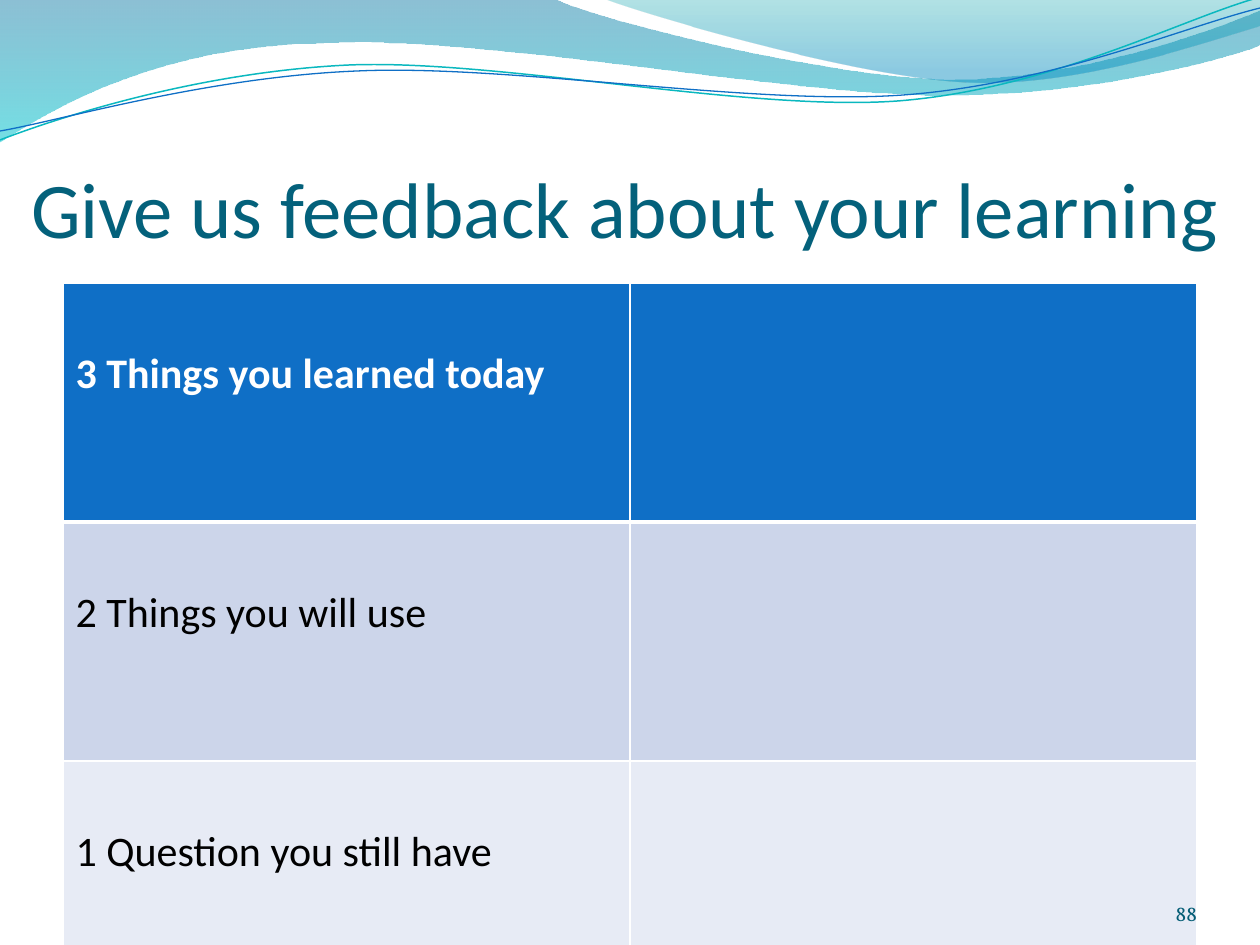
import math
from dataclasses import dataclass

from lxml import etree
from pptx import Presentation
from pptx import util as u
from pptx.dml.color import RGBColor
from pptx.enum import text
from pptx.oxml import ns

EMU_PER_PX = 914400 / 126


def px(length):
    return u.Emu(round(length * EMU_PER_PX))


@dataclass(frozen=True)
class Theme:
    font: str = "Calibri"
    number_font: str = "Vollkorn"
    title: str = "04617B"
    number: str = "045D75"
    header: str = "0F6FC6"
    aqua: str = "0AB8BF"
    bands: tuple = ("CCD5EA", "E7EBF5")
    white: str = "FFFFFF"
    black: str = "000000"
    title_size: int = 45
    table_size: int = 24
    number_size: int = 12
    # Gradient stops: position, colour, opacity in percent
    main_wave: tuple = ((0, "0074A1", 45), (100, "00C6CF", 55))
    top_wave: tuple = ((0, "00A1A9", 30), (80, "008BBF", 45))


class SlideBuilder:
    def __init__(self, slide, theme):
        self.slide = slide
        self.theme = theme

    def style(self, paragraph, size, color, font=None, bold=False):
        for run in paragraph.runs:
            run.font.name = font or self.theme.font
            run.font.size = u.Pt(size)
            run.font.bold = bold
            run.font.color.rgb = RGBColor.from_string(color)

    def outline(self, box, start, segments, close, rotation=0):
        """Draw lines (2 numbers) and cubic curves (6 numbers) inside a box."""
        left, top, width, height = box
        center_x, center_y = left + width / 2, top + height / 2
        cosine, sine = math.cos(math.radians(rotation)), math.sin(math.radians(rotation))

        def local(x, y):
            x, y = x - center_x, y - center_y
            return (px(x * cosine + y * sine + width / 2),
                    px(y * cosine - x * sine + height / 2))

        builder = self.slide.shapes.build_freeform(*local(*start), scale=1.0)
        builder.add_line_segments([local(*segment[-2:]) for segment in segments], close=close)
        shape = builder.convert_to_shape()
        shape.left, shape.top, shape.width, shape.height = map(px, box)
        shape.rotation = rotation
        shape.shadow.inherit = False

        # Place the path in the box and bend its curved segments
        outline = next(shape._element.iter(ns.qn("a:path")))
        outline.set("w", str(px(width)))
        outline.set("h", str(px(height)))
        for command, segment in zip(list(outline), [start, *segments]):
            for point in list(command):
                command.remove(point)
            if len(segment) == 6:
                command.tag = ns.qn("a:cubicBezTo")
            for x, y in zip(segment[::2], segment[1::2]):
                x, y = local(x, y)
                etree.SubElement(command, ns.qn("a:pt"), x=str(x), y=str(y))
        return shape

    def wave(self, stops, box, start, *segments):
        shape = self.outline(box, start, segments, close=True)
        shape.line.fill.background()
        shape.fill.gradient()
        shape.fill.gradient_angle = 270
        for stop, (position, color, _) in zip(shape.fill.gradient_stops, stops):
            stop.position = position / 100
            stop.color.rgb = RGBColor.from_string(color)
        colors = shape._element.spPr.iter(ns.qn("a:srgbClr"))
        for element, (_, _, opacity) in zip(colors, stops):
            etree.SubElement(element, ns.qn("a:alpha"), val=str(opacity * 1000))

    def curve(self, color, width, box, start, *segments):
        shape = self.outline(box, start, segments, close=False, rotation=357.3)
        shape.fill.background()
        shape.line.color.rgb = RGBColor.from_string(color)
        shape.line.width = u.Pt(width)

    def place_text(self, shape, content, box, margin_top=0):
        shape.left, shape.top, shape.width, shape.height = map(px, box)
        frame = shape.text_frame
        frame.word_wrap = True
        frame.auto_size = text.MSO_AUTO_SIZE.NONE
        frame.vertical_anchor = text.MSO_ANCHOR.BOTTOM
        frame.margin_left = frame.margin_right = frame.margin_bottom = 0
        frame.margin_top = px(margin_top)
        frame.text = content
        return frame.paragraphs[0]

    def title(self, content, box):
        paragraph = self.place_text(self.slide.shapes.title, content, box, margin_top=6)
        paragraph.alignment = text.PP_ALIGN.LEFT
        self.style(paragraph, self.theme.title_size, self.theme.title)

    def number(self, content, box):
        shape = self.slide.shapes.add_textbox(0, 0, 0, 0)
        paragraph = self.place_text(shape, content, box)
        paragraph.alignment = text.PP_ALIGN.RIGHT
        self.style(paragraph, self.theme.number_size, self.theme.number, self.theme.number_font)

    def borders(self, cell, widths):
        properties = cell._tc.get_or_add_tcPr()
        for side, width in zip("LRTB", widths):
            line = etree.SubElement(properties, ns.qn(f"a:ln{side}"), w=str(u.Pt(width)))
            fill = etree.SubElement(line, ns.qn("a:solidFill"))
            etree.SubElement(fill, ns.qn("a:srgbClr"), val=self.theme.white)

    def table(self, prompts, left, top, width, heights):
        frame = self.slide.shapes.add_table(len(prompts), 2, px(left), px(top),
                                            px(width), px(sum(heights)))
        for index, (row, prompt) in enumerate(zip(frame.table.rows, prompts)):
            header = index == 0
            row.height = px(heights[index])
            row.cells[0].text = prompt
            for cell in row.cells:
                # Prompts sit one line below the top of their row
                cell.margin_top = px(66)
                self.borders(cell, (1, 1, 3 if index == 1 else 1, 3 if header else 1))
                cell.fill.solid()
                fill = self.theme.header if header else self.theme.bands[(index - 1) % 2]
                cell.fill.fore_color.rgb = RGBColor.from_string(fill)
                color = self.theme.white if header else self.theme.black
                self.style(cell.text_frame.paragraphs[0], self.theme.table_size, color, bold=header)


def main():
    presentation = Presentation()
    presentation.slide_width, presentation.slide_height = px(1260), px(945)
    theme = Theme()
    slide = presentation.slides.add_slide(presentation.slide_layouts[5])
    builder = SlideBuilder(slide, theme)

    # Waves along the top edge
    builder.wave(theme.main_wave, (-1, -1, 1262, 143),
                 (0, 0), (554, -1), (600, 21, 837, 79, 955, 79),
                 (1075, 79, 1207, 33, 1260, 11), (1261, 45),
                 (1239, 55, 1096, 96, 940, 95), (784, 95, 481, 35, 324, 43),
                 (163, 45, 58, 105, -1, 142), (0, 0))
    builder.wave(theme.top_wave, (604, -1, 656, 88),
                 (604, -1), (641, 14, 859, 78, 969, 82),
                 (1079, 87, 1211, 40, 1260, 26), (1260, 0), (604, -1))
    builder.curve(theme.aqua, 0.85, (-2, 28, 1262, 89),
                  (0, 140), (60, 117, 199, 72, 349, 65),
                  (498, 59, 747, 112, 898, 101), (1050, 89, 1182, 19, 1257, -2))
    builder.curve(theme.header, 0.75, (-2, 38, 1263, 73),
                  (0, 131), (59, 121, 207, 77, 357, 71),
                  (508, 64, 752, 106, 903, 95), (1053, 84, 1186, 26, 1260, 8))

    # Title, feedback table and slide number
    builder.title("Give us feedback about your learning", (31, 97, 1197, 157))
    builder.table(("3 Things you learned today", "2 Things you will use",
                   "1 Question you still have"),
                  left=63, top=283, width=1134, heights=(239, 239, 185))
    builder.number("88", (1092, 876, 105, 50))

    presentation.save("out.pptx")


if __name__ == "__main__":
    main()
